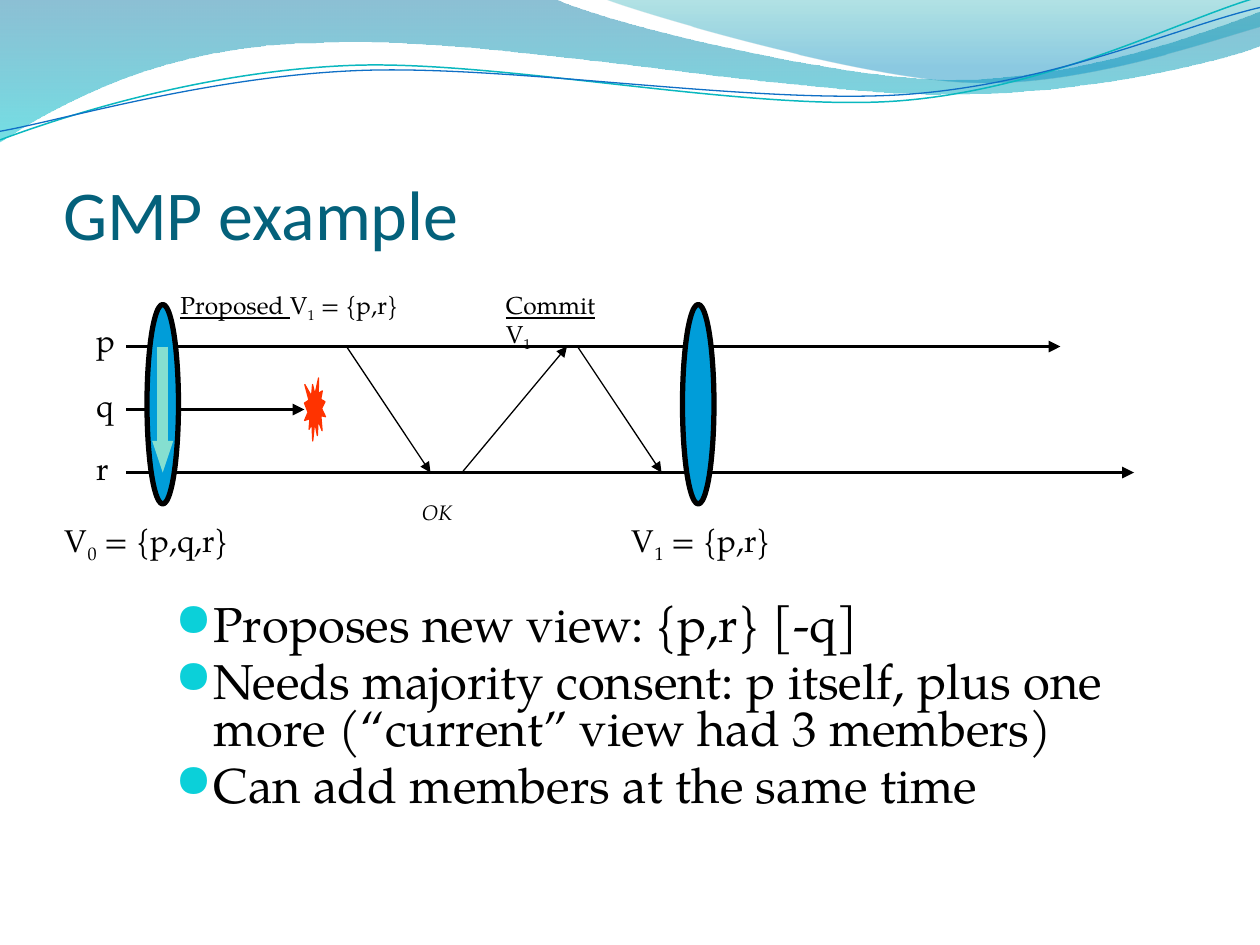
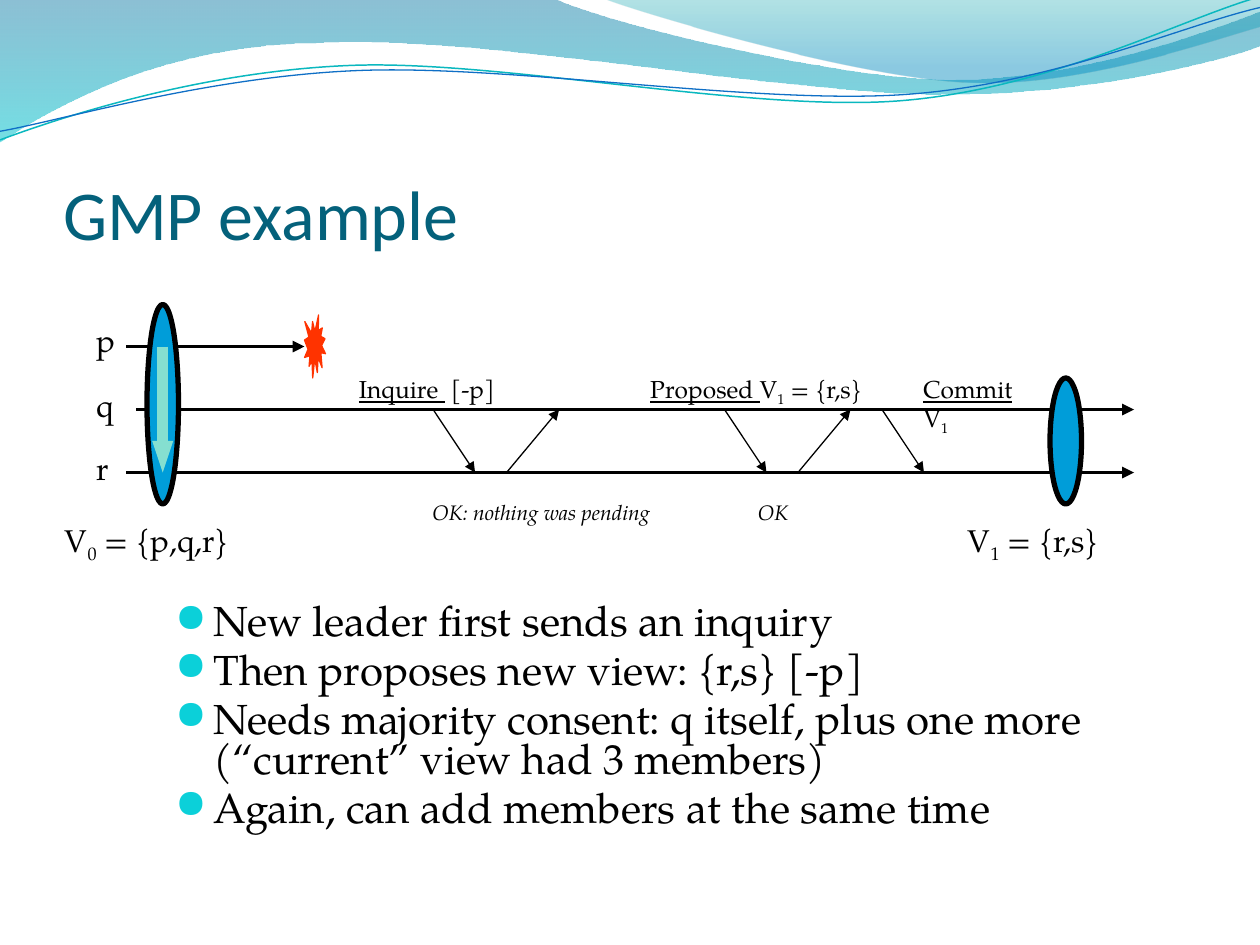
from dataclasses import dataclass
from typing import NamedTuple

from lxml import etree
from pptx import Presentation
from pptx import util as u
from pptx.dml.color import RGBColor
from pptx.enum import shapes, text
from pptx.oxml.ns import qn


@dataclass(frozen=True)
class Theme:
    heading_font: str = "Calibri"
    body_font: str = "TeX Gyre Pagella"
    bullet_font: str = "OpenSymbol"
    title: str = "04617B"
    ink: str = "000000"
    bullet: str = "0BD0D9"
    view: str = "009DD9"
    leader: str = "85DFD0"
    crash: str = "FF3300"
    title_size: float = 40
    label_size: float = 18
    step_size: float = 14
    reply_size: float = 12
    timeline_width: float = 2.25
    message_width: float = 0.75
    leader_width: float = 6
    view_outline: float = 3


THEME = Theme()


class Piece(NamedTuple):
    text: str
    underline: bool = False
    subscript: bool = False


class Label(NamedTuple):
    left: float
    top: float
    width: float
    pieces: list[Piece]
    size: float = THEME.label_size
    italic: bool = False


class Process(NamedTuple):
    name: str
    y: float
    label_top: float


class Timeline(NamedTuple):
    y: float
    end: float
    start: float = 72


class Message(NamedTuple):
    start: float
    end: float
    from_y: float
    to_y: float


class View(NamedTuple):
    left: float
    top: float
    height: float


class Stop(NamedTuple):
    position: float
    color: str
    alpha: int


class Wave(NamedTuple):
    """Outline of two-number line steps and six-number Bezier steps."""
    start: tuple
    steps: list[tuple]
    stops: tuple = ()
    line: str = ""
    width: float = 0
    rotation: float = 0


@dataclass
class Example:
    timelines: list[Timeline]
    crash_y: float
    messages: list[Message]
    views: list[View]
    labels: list[Label]
    bullets: list[str]
    bullet_size: float


# Process rows, shared by both examples
P, Q, R = PROCESSES = [Process("p", 198, 180), Process("q", 234, 217),
                       Process("r", 270, 253)]
CRASH_X = 174
FIRST_VIEW = View(84, 174, 114)

# Wavy header
WAVES = [
    Wave((0, -0.7), [(316.8, -0.7), (342.7, 12.2, 478.1, 45.4, 545.8, 45.4),
                     (614.2, 45.4, 689.8, 18.7, 720, 6.5), (720.7, 25.9),
                     (707.8, 31.7, 626.4, 54.7, 537.1, 54),
                     (447.8, 54, 275, 20.2, 185, 24.5),
                     (92.9, 25.2, 33.1, 59.8, -0.7, 81.4)],
         (Stop(0, "0074A1", 45), Stop(1, "00C6CF", 55))),
    Wave((344.9, -0.7), [(366.5, 7.9, 491, 44.6, 553.7, 46.8),
                         (616.3, 49.7, 691.9, 23, 720, 15.1), (720, 0)],
         (Stop(0, "00A1A9", 30), Stop(0.8, "008BBF", 45))),
    Wave((-1.4, 63), [(33.8, 51.7, 114.1, 29.4, 199.8, 29.9),
                      (284.8, 30.3, 425.8, 67.3, 512.4, 64.9),
                      (599, 62.4, 676.5, 25.7, 720.2, 15.5)],
         line="0AB8BF", width=0.85, rotation=357.3),
    Wave((-1.1, 58), [(32.9, 53.8, 118.3, 32.5, 204.1, 33),
                      (290.6, 33.4, 428.9, 63.1, 515.5, 61.4),
                      (601.3, 59.6, 674.4, 29.9, 721.4, 21.3)],
         line="0F6FC6", width=0.75, rotation=357.3),
]


def view_name(number: str, members: str) -> list[Piece]:
    return [Piece("V"), Piece(number, subscript=True), Piece(f" = {{{members}}}")]


def proposal(left: float, top: float, width: float, members: str) -> Label:
    return Label(left, top, width, [Piece("Proposed ", underline=True),
                                    *view_name("1", members)], THEME.step_size)


def commit(left: float, top: float) -> Label:
    return Label(left, top, 79, [Piece("Commit", underline=True), Piece(" V"),
                                 Piece("1", subscript=True)], THEME.step_size)


def reply(left: float, width: float, words: str) -> Label:
    return Label(left, 282, width, [Piece(words)], THEME.reply_size, italic=True)


def view_label(left: float, number: str, members: str) -> Label:
    return Label(left, 294, 126, view_name(number, members))


def round_trip(start: float) -> list[Message]:
    """Request from q to r and the answer back."""
    return [Message(start, start + 24, Q.y, R.y),
            Message(start + 42, start + 72, R.y, Q.y)]


EXAMPLES = [
    Example(
        timelines=[Timeline(P.y, 606), Timeline(Q.y, CRASH_X), Timeline(R.y, 648)],
        crash_y=Q.y,
        messages=[Message(198, 246, P.y, R.y), Message(264, 324, R.y, P.y),
                  Message(330, 378, P.y, R.y)],
        views=[FIRST_VIEW, View(390, 174, 114)],
        labels=[proposal(96, 162, 186, "p,r"), commit(282, 162),
                reply(234, 42, "OK"), view_label(354, "1", "p,r")],
        bullets=["Proposes new view: {p,r} [-q]",
                 "Needs majority consent: p itself, plus one more "
                 "(“current” view had 3 members)",
                 "Can add members at the same time"],
        bullet_size=28),
    Example(
        timelines=[Timeline(P.y, CRASH_X), Timeline(Q.y, 648, 78),
                   Timeline(R.y, 648)],
        crash_y=P.y,
        messages=[*round_trip(247.5), *round_trip(414),
                  Message(504, 528, Q.y, R.y)],
        views=[FIRST_VIEW, View(600, 216, 72)],
        labels=[Label(198, 210, 144, [Piece("Inquire ", underline=True),
                                      Piece(" [-p]")], THEME.step_size),
                proposal(364.5, 210, 144, "r,s"), commit(520.5, 210),
                reply(240, 150, "OK: nothing was pending"),
                reply(426, 42, "OK"), view_label(546, "1", "r,s")],
        bullets=["New leader first sends an inquiry",
                 "Then proposes new view: {r,s} [-p]",
                 "Needs majority consent: q itself, plus one more "
                 "(“current” view had 3 members)",
                 "Again, can add members at the same time"],
        bullet_size=24),
]


def rgb(color: str) -> RGBColor:
    return RGBColor.from_string(color)


def style_font(font, name: str, size: float, color: str) -> None:
    font.name, font.size = name, u.Pt(size)
    font.color.rgb = rgb(color)


def draw_wave(slide, wave: Wave):
    corners = [(u.Pt(x), u.Pt(y)) for x, y in
               [wave.start, *(step[-2:] for step in wave.steps)]]
    builder = slide.shapes.build_freeform(*corners[0])
    builder.add_line_segments(corners[1:], close=bool(wave.stops))
    ribbon = builder.convert_to_shape()
    ribbon.shadow.inherit = False
    # Bend the straight steps that have control points
    for straight, step in zip(list(ribbon.element.iter(qn("a:lnTo"))), wave.steps):
        if len(step) == 6:
            bend = etree.Element(qn("a:cubicBezTo"))
            for x, y in zip(step[::2], step[1::2]):
                etree.SubElement(bend, qn("a:pt"), x=str(u.Pt(x) - ribbon.left),
                                 y=str(u.Pt(y) - ribbon.top))
            straight.getparent().replace(straight, bend)
    ribbon.rotation = wave.rotation
    if wave.stops:
        ribbon.fill.gradient()
        ribbon.fill.gradient_angle = 270
        for target, stop in zip(ribbon.fill.gradient_stops, wave.stops):
            target.position, target.color.rgb = stop.position, rgb(stop.color)
        colors = ribbon.element.spPr.iter(qn("a:srgbClr"))
        for color, stop in zip(list(colors), wave.stops):
            etree.SubElement(color, qn("a:alpha"), val=str(stop.alpha * 1000))
        ribbon.line.fill.background()
    else:
        ribbon.fill.background()
        ribbon.line.color.rgb, ribbon.line.width = rgb(wave.line), u.Pt(wave.width)
    return ribbon


def move_header_to_master(deck, slide) -> None:
    """Draw the waves once and let every slide inherit them."""
    first_placeholder = deck.slide_master.shapes[0].element
    for number, wave in enumerate(WAVES, start=101):
        ribbon = draw_wave(slide, wave).element
        ribbon.nvSpPr.cNvPr.set("id", str(number))
        first_placeholder.addprevious(ribbon)


def draw_title(slide, words: str) -> None:
    title = slide.shapes.title
    title.left, title.top, title.width, title.height = map(u.Pt, (36, 55.5, 648, 90))
    frame = title.text_frame
    frame.text = words
    frame.auto_size = text.MSO_AUTO_SIZE.NONE
    frame.vertical_anchor = text.MSO_ANCHOR.BOTTOM
    frame.margin_left = frame.margin_right = frame.margin_bottom = 0
    frame.margin_top = u.Pt(3.6)
    frame.paragraphs[0].alignment = text.PP_ALIGN.LEFT
    style_font(frame.paragraphs[0].runs[0].font, THEME.heading_font,
               THEME.title_size, THEME.title)


def draw_arrow(slide, start: tuple, end: tuple, color: str, width: float,
               head: str = "med") -> None:
    arrow = slide.shapes.add_connector(shapes.MSO_CONNECTOR.STRAIGHT,
                                       *map(u.Pt, start + end))
    arrow.line.color.rgb, arrow.line.width = rgb(color), u.Pt(width)
    etree.SubElement(arrow.line._get_or_add_ln(), qn("a:tailEnd"), type="triangle",
                     w=head)
    etree.SubElement(arrow.element.spPr, qn("a:effectLst"))


def draw_mark(slide, preset, box: tuple, fill: str, line: str, width: float) -> None:
    mark = slide.shapes.add_shape(preset, *map(u.Pt, box))
    mark.shadow.inherit = False
    mark.fill.solid()
    mark.fill.fore_color.rgb = rgb(fill)
    mark.line.color.rgb, mark.line.width = rgb(line), u.Pt(width)


def add_frame(slide, left: float, top: float, width: float, height: float):
    frame = slide.shapes.add_textbox(*map(u.Pt, (left, top, width, height))).text_frame
    frame.word_wrap = True
    return frame


def draw_label(slide, label: Label) -> None:
    frame = add_frame(slide, label.left, label.top, label.width,
                      label.size * 1.2 + 7.2)
    for piece in label.pieces:
        run = frame.paragraphs[0].add_run()
        run.text = piece.text
        style_font(run.font, THEME.body_font, label.size, THEME.ink)
        run.font.underline, run.font.italic = piece.underline, label.italic
        if piece.subscript:
            run.font._element.set("baseline", "-25000")


def draw_bullets(slide, lines: list[str], size: float) -> None:
    frame = add_frame(slide, 93, 342, 612, 141)
    frame.text = "\n".join(lines)
    for point in frame.paragraphs:
        point.line_spacing, point.space_before = 0.8, u.Pt(size * 0.2)
        style_font(point.runs[0].font, THEME.body_font, size, THEME.ink)
        props = point._p.get_or_add_pPr()
        props.set("marL", str(u.Pt(21.9)))
        props.set("indent", str(-u.Pt(21.9)))
        color = etree.SubElement(props, qn("a:buClr"))
        etree.SubElement(color, qn("a:srgbClr"), val=THEME.bullet)
        etree.SubElement(props, qn("a:buSzPct"), val="95000")
        etree.SubElement(props, qn("a:buFont"), typeface=THEME.bullet_font)
        etree.SubElement(props, qn("a:buChar"), char="●")


def draw_example(slide, example: Example) -> None:
    draw_title(slide, "GMP example")
    draw_bullets(slide, example.bullets, example.bullet_size)

    # Timelines, views and the crash
    for row in example.timelines:
        draw_arrow(slide, (row.start, row.y), (row.end, row.y), THEME.ink,
                   THEME.timeline_width)
    for view in example.views:
        draw_mark(slide, shapes.MSO_SHAPE.OVAL, (view.left, view.top, 18, view.height),
                  THEME.view, THEME.ink, THEME.view_outline)
    draw_mark(slide, shapes.MSO_SHAPE.EXPLOSION1, (CRASH_X, example.crash_y - 18, 12, 36),
              THEME.crash, THEME.crash, THEME.message_width)
    draw_arrow(slide, (93, P.y), (93, R.y), THEME.leader, THEME.leader_width, "sm")

    # Messages and labels
    for message in example.messages:
        draw_arrow(slide, (message.start, message.from_y), (message.end, message.to_y),
                   THEME.ink, THEME.message_width)
    names = [Label(48, row.label_top, 24, [Piece(row.name)]) for row in PROCESSES]
    for label in [*names, view_label(30, "0", "p,q,r"), *example.labels]:
        draw_label(slide, label)


def main() -> None:
    deck = Presentation()
    deck.slide_width, deck.slide_height = u.Pt(720), u.Pt(540)
    title_only = deck.slide_layouts[5]
    slides = [deck.slides.add_slide(title_only) for _ in EXAMPLES]
    move_header_to_master(deck, slides[0])
    for slide, example in zip(slides, EXAMPLES):
        draw_example(slide, example)
    deck.save("out.pptx")


if __name__ == "__main__":
    main()
